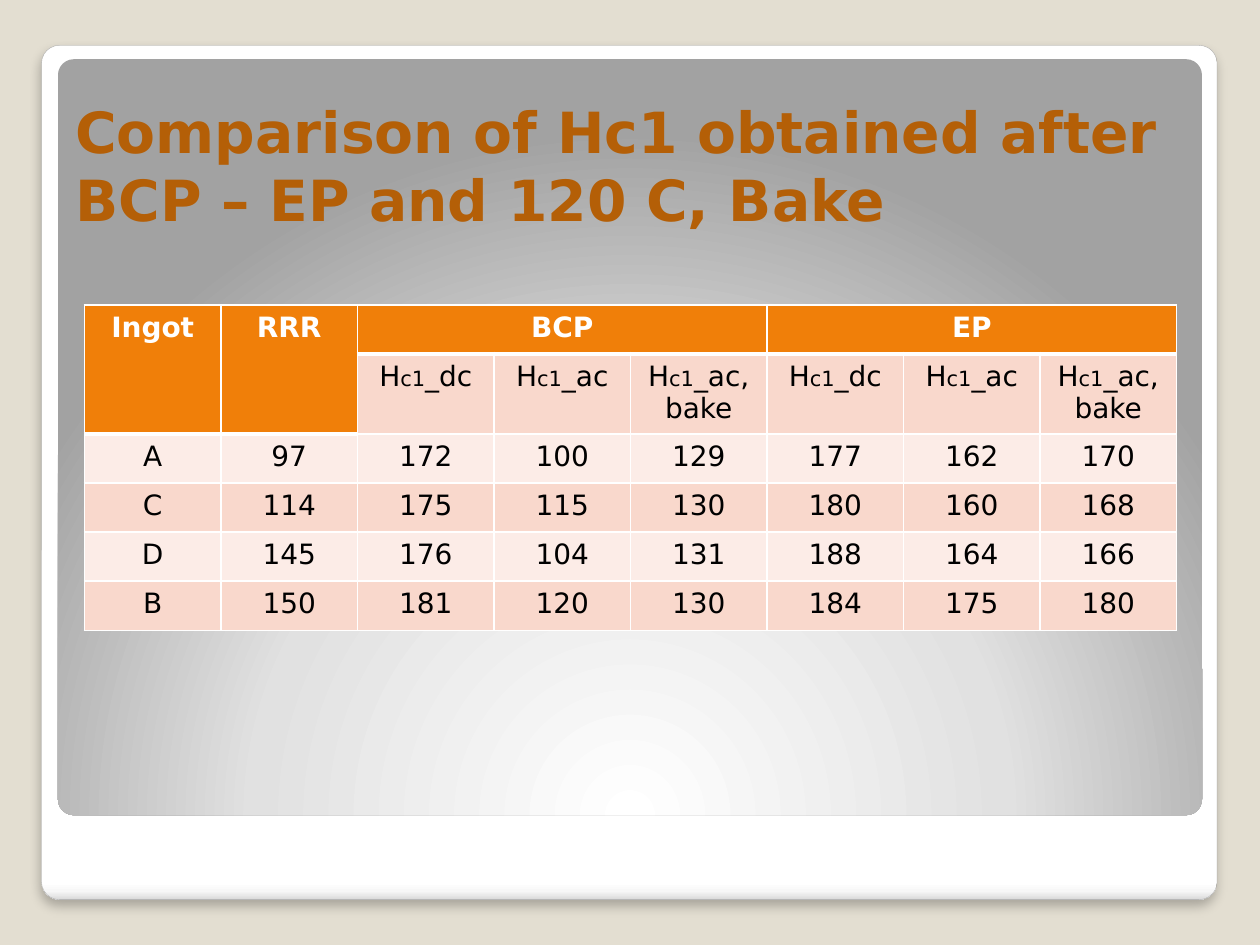
from lxml import etree
from pptx import Presentation
from pptx.dml.color import RGBColor
from pptx.enum import shapes, text
from pptx.oxml import parse_xml
from pptx.oxml.ns import nsdecls, qn
from pptx.util import Inches, Pt

FONT = "DejaVu Sans"
BACKGROUND = RGBColor(0xE3, 0xDE, 0xD1)
FRAME_LINE = RGBColor(0xA4, 0xA4, 0xA4)
TITLE_COLOR = RGBColor(0xB4, 0x5F, 0x07)
ORANGE = RGBColor(0xF0, 0x7F, 0x09)
PINK = RGBColor(0xF9, 0xD8, 0xCC)
PALE_PINK = RGBColor(0xFC, 0xEC, 0xE7)
WHITE = RGBColor(0xFF, 0xFF, 0xFF)
BLACK = RGBColor(0, 0, 0)

FRAME_STOPS = [(0, "FFFFFF"), (98, "FFFFFF"), (99, "F7F7F7"), (100, "DADADA")]
PANEL_STOPS = [(0, "FFFFFF"), (55, "E1E1E1"), (100, "A2A2A2")]
LINEAR = '<a:lin ang="5400000" scaled="0"/>'
RADIAL = ('<a:path path="circle"><a:fillToRect l="50000" t="175000" '
          'r="50000" b="-75000"/></a:path>')

GROUPS = {"BCP": 2, "EP": 5}
MEASURES = ["_dc", "_ac", "_ac,\nbake"]
INGOTS = [
    ("A", 97, 172, 100, 129, 177, 162, 170),
    ("C", 114, 175, 115, 130, 180, 160, 168),
    ("D", 145, 176, 104, 131, 188, 164, 166),
    ("B", 150, 181, 120, 130, 184, 175, 180),
]
ROW_HEIGHTS = [0.39, 0.61] + [0.39] * len(INGOTS)
COLUMN_WIDTH = 8.67 / 8


def add_text(paragraph, content, size=16, color=BLACK, bold=False):
    """Add formatted text; a newline becomes a line break."""
    for index, line in enumerate(content.split("\n")):
        if index:
            paragraph.add_line_break()
        run = paragraph.add_run()
        run.text = line
        run.font.name = FONT
        run.font.size = Pt(size)
        run.font.bold = bold
        run.font.color.rgb = color
    return run


def add_rounded(slide, left, top, width, height, stops, direction):
    shape = slide.shapes.add_shape(
        shapes.MSO_SHAPE.ROUNDED_RECTANGLE,
        Inches(left), Inches(top), Inches(width), Inches(height))
    shape.adjustments[0] = 0.021
    shape.shadow.inherit = False
    shape.line.fill.background()
    stop_xml = "".join(
        f'<a:gs pos="{position * 1000}"><a:srgbClr val="{color}"/></a:gs>'
        for position, color in stops)
    gradient = parse_xml(
        f'<a:gradFill {nsdecls("a")} rotWithShape="1">'
        f'<a:gsLst>{stop_xml}</a:gsLst>{direction}</a:gradFill>')
    shape._element.spPr.find(qn("a:prstGeom")).addnext(gradient)
    return shape


def add_shadow(shape):
    effects = shape._element.spPr.find(qn("a:effectLst"))
    effects.append(parse_xml(
        f'<a:outerShdw {nsdecls("a")} blurRad="{Pt(6)}" dist="{Pt(4)}" '
        'dir="5400000" algn="tl" rotWithShape="0"><a:srgbClr val="000000">'
        '<a:alpha val="25000"/></a:srgbClr></a:outerShdw>'))


def add_title(slide, content):
    box = slide.shapes.add_textbox(
        Inches(0.5), Inches(0.75), Inches(8.95), Inches(1.15))
    frame = box.text_frame
    frame.word_wrap = True
    frame.vertical_anchor = text.MSO_ANCHOR.BOTTOM
    run = add_text(frame.paragraphs[0], content, size=32.4,
                   color=TITLE_COLOR, bold=True)
    # Thin dark outline around the letters
    run.font._element.insert(0, parse_xml(
        f'<a:ln {nsdecls("a")} w="{Pt(0.75)}"><a:solidFill>'
        '<a:srgbClr val="000000"/></a:solidFill></a:ln>'))


def style_cell(cell, fill, bottom=1):
    properties = cell._tc.get_or_add_tcPr()
    for side, width in (("L", 1), ("R", 1), ("T", 1), ("B", bottom)):
        border = etree.SubElement(properties, qn(f"a:ln{side}"), w=str(Pt(width)))
        solid = etree.SubElement(border, qn("a:solidFill"))
        etree.SubElement(solid, qn("a:srgbClr"), val=str(WHITE))
    cell.fill.solid()
    cell.fill.fore_color.rgb = fill
    paragraph = cell.text_frame.paragraphs[0]
    paragraph.alignment = text.PP_ALIGN.CENTER
    return paragraph


def add_heading(table, column, label, last_row, last_column):
    cell = table.cell(0, column)
    cell.merge(table.cell(last_row, last_column))
    for row in range(last_row + 1):
        for covered in range(column, last_column + 1):
            paragraph = style_cell(table.cell(row, covered), ORANGE, bottom=3)
    paragraph = cell.text_frame.paragraphs[0]
    add_text(paragraph, label, color=WHITE, bold=True)


def add_ingot_table(slide):
    table = slide.shapes.add_table(
        len(ROW_HEIGHTS), 8, Inches(0.67), Inches(2.42),
        Inches(8.67), Inches(2.6)).table
    for column in table.columns:
        column.width = Inches(COLUMN_WIDTH)
    for row, height in zip(table.rows, ROW_HEIGHTS):
        row.height = Inches(height)

    # Headings, with the measures under each treatment
    for column, label in enumerate(["Ingot", "RRR"]):
        add_heading(table, column, label, 1, column)
    for label, first in GROUPS.items():
        add_heading(table, first, label, 0, first + 2)
        for column, measure in enumerate(MEASURES, first):
            paragraph = style_cell(table.cell(1, column), PINK)
            add_text(paragraph, "H")
            add_text(paragraph, "c1", size=12)
            add_text(paragraph, measure)

    # Banded values
    for row, values in enumerate(INGOTS, 2):
        fill = PINK if row % 2 else PALE_PINK
        for column, value in enumerate(values):
            add_text(style_cell(table.cell(row, column), fill), str(value))


def main():
    presentation = Presentation()
    presentation.slide_width = Inches(10)
    presentation.slide_height = Inches(7.5)
    slide = presentation.slides.add_slide(presentation.slide_layouts[6])
    slide.background.fill.solid()
    slide.background.fill.fore_color.rgb = BACKGROUND

    # White frame and grey panel
    frame = add_rounded(slide, 0.33, 0.36, 9.33, 6.78, FRAME_STOPS, LINEAR)
    frame.line.color.rgb = FRAME_LINE
    frame.line.width = Pt(0.16)
    add_shadow(frame)
    add_rounded(slide, 0.46, 0.47, 9.08, 6, PANEL_STOPS, RADIAL)

    add_title(slide, "Comparison of Hc1 obtained after BCP – EP and 120 C, Bake")
    add_ingot_table(slide)
    presentation.save("out.pptx")


if __name__ == "__main__":
    main()
